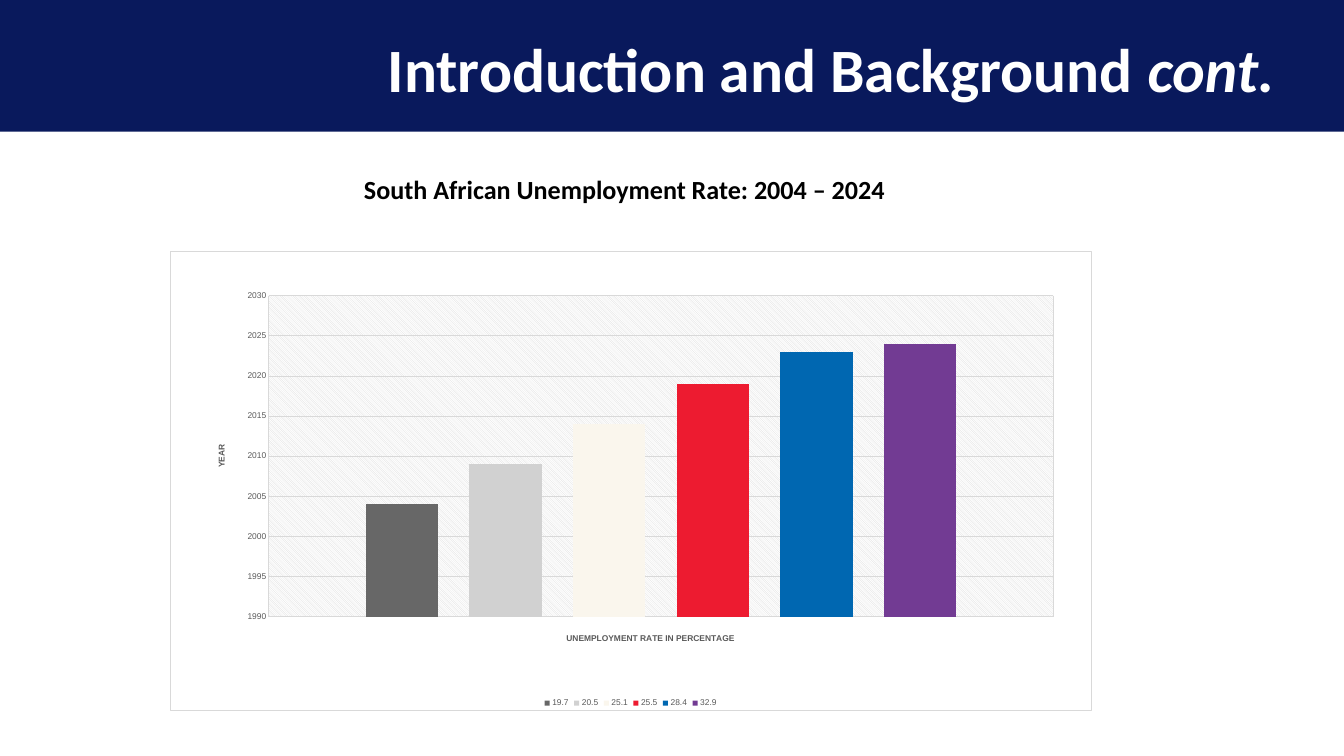
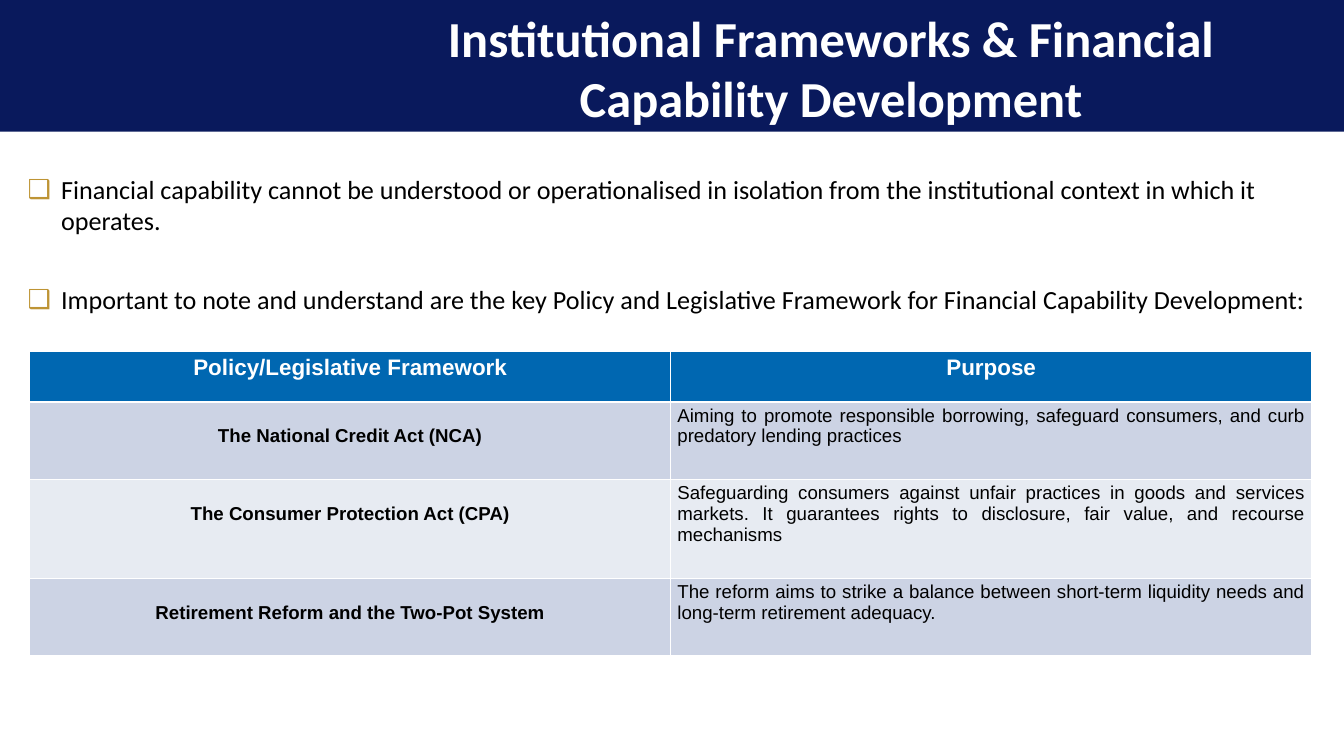
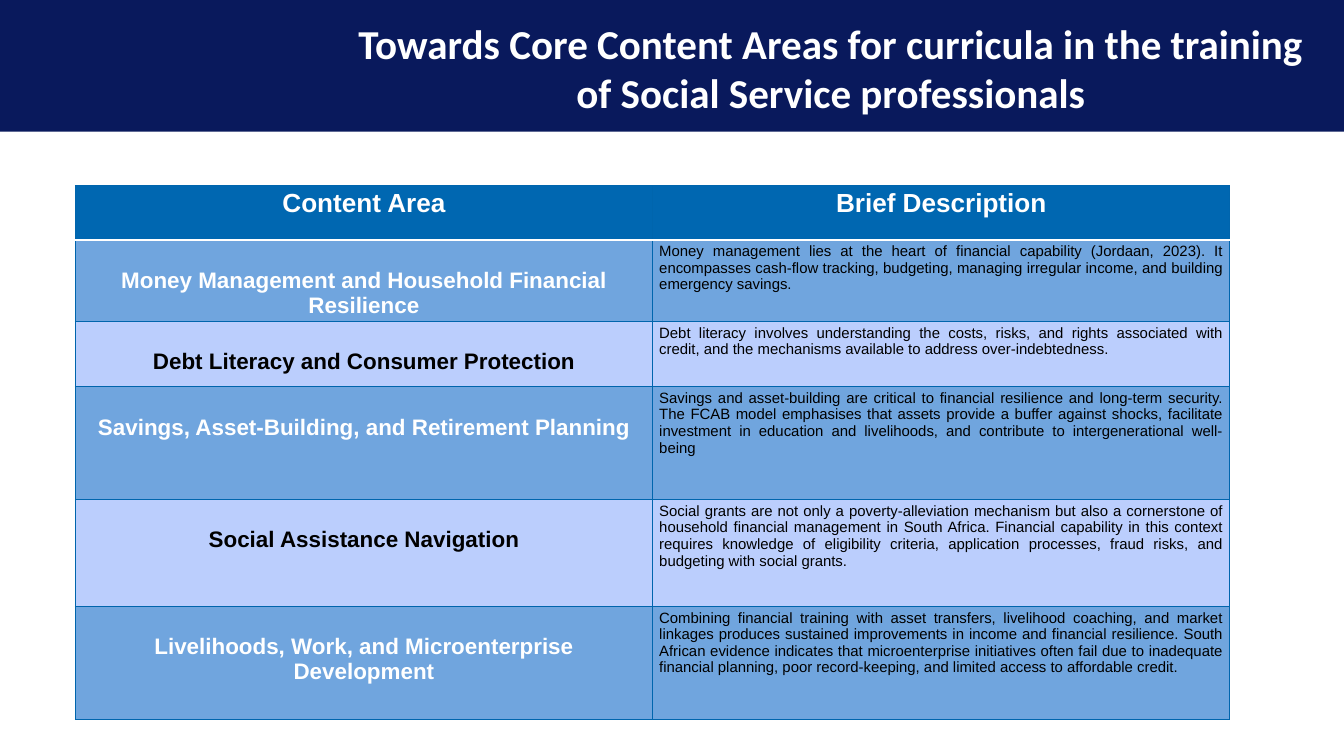
import pptx
import pptx.chart.data
import pptx.dml.color
import pptx.enum.chart
import pptx.enum.shapes
import pptx.enum.text
import pptx.oxml
import pptx.oxml.ns
import pptx.util

PX = 9144
NAVY = pptx.dml.color.RGBColor(0x09, 0x19, 0x5C)
BLUE = pptx.dml.color.RGBColor(0x00, 0x67, 0xB1)
BORDER_BLUE = pptx.dml.color.RGBColor(0x00, 0x65, 0xAD)
MID_BLUE = pptx.dml.color.RGBColor(0x70, 0xA5, 0xDE)
PALE_BLUE = pptx.dml.color.RGBColor(0xBB, 0xCE, 0xFD)
BLUE_GREY = pptx.dml.color.RGBColor(0xCC, 0xD3, 0xE4)
PALE_GREY = pptx.dml.color.RGBColor(0xE7, 0xEB, 0xF2)
GOLD = pptx.dml.color.RGBColor(0xBE, 0x94, 0x34)
WHITE = pptx.dml.color.RGBColor(0xFF, 0xFF, 0xFF)
BLACK = pptx.dml.color.RGBColor(0x00, 0x00, 0x00)
TEXT_GREY = pptx.dml.color.RGBColor(0x59, 0x59, 0x59)
LINE_GREY = pptx.dml.color.RGBColor(0xD9, 0xD9, 0xD9)
DARK_GREY = pptx.dml.color.RGBColor(0x67, 0x67, 0x67)
SILVER = pptx.dml.color.RGBColor(0xD1, 0xD1, 0xD1)
CREAM = pptx.dml.color.RGBColor(0xFA, 0xF6, 0xED)
RED = pptx.dml.color.RGBColor(0xED, 0x1B, 0x30)
PURPLE = pptx.dml.color.RGBColor(0x72, 0x3B, 0x93)

ALIGN = pptx.enum.text.PP_ALIGN
Pt = pptx.util.Pt
qn = pptx.oxml.ns.qn
parse_xml = pptx.oxml.parse_xml
NAMESPACE_A = pptx.oxml.ns.nsdecls("a")
NAMESPACE_C = pptx.oxml.ns.nsdecls("c", "a")

TITLE_FORMAT = {"name": "Calibri", "bold": True, "color": WHITE}
BODY_FORMAT = {"name": "Calibri", "size": Pt(28), "color": BLACK}
CHART_FORMAT = {"name": "Arial", "size": Pt(9), "color": TEXT_GREY}


def apply_format(font, values):
    for name, value in values.items():
        if name == "color":
            font.color.rgb = value
        else:
            setattr(font, name, value)


def add_framework_table(slide, place, row_heights, rows, style):
    left, top, width = place
    table = slide.shapes.add_table(
        len(rows), 2, left * PX, top * PX, width * PX, sum(row_heights) * PX
    ).table
    table.horz_banding = False
    for row, height in zip(table.rows, row_heights):
        row.height = height * PX
    for row_index, texts in enumerate(rows):
        is_header = row_index == 0
        fill, label_color = (BLUE, WHITE) if is_header else style["bands"][(row_index - 1) % 2]
        for column_index, text in enumerate(texts):
            is_label = column_index == 0
            cell = table.cell(row_index, column_index)
            for side in ("L", "R", "T", "B"):
                heavy = (side == "B" and is_header) or (side == "T" and row_index == 1)
                color, weight = (WHITE, style["header_line"]) if heavy else style["border"]
                cell._tc.get_or_add_tcPr().append(parse_xml(
                    f'<a:ln{side} {NAMESPACE_A} w="{Pt(weight)}"><a:solidFill>'
                    f'<a:srgbClr val="{color}"/></a:solidFill></a:ln{side}>'
                ))
            cell.fill.solid()
            cell.fill.fore_color.rgb = fill
            paragraph = cell.text_frame.paragraphs[0]
            paragraph.alignment = ALIGN.CENTER if is_header or is_label else ALIGN.JUSTIFY
            run = paragraph.add_run()
            run.text = text
            if is_header:
                size = style["header_size"]
            elif is_label:
                size = style["label_size"]
                cell.margin_top = style["label_margin"] * PX
            else:
                size = style["text_size"]
            apply_format(run.font, {
                "name": "Arial", "size": Pt(size), "bold": is_header or is_label,
                "color": label_color if is_header or is_label else BLACK,
            })


presentation = pptx.Presentation()
presentation.slide_width = 2000 * PX
presentation.slide_height = 1125 * PX

titles = [
    (1, 66, [("Introduction and Background ", False), ("cont.", True)]),
    (1, 54, [("Institutional Frameworks & Financial Capability Development", False)]),
    (5, 44, [("Towards Core Content Areas for curricula in the training of Social Service professionals", False)]),
]
slides = []
for layout_index, size, pieces in titles:
    slide = presentation.slides.add_slide(presentation.slide_layouts[layout_index])
    slides.append(slide)
    title = slide.shapes.title
    title.left, title.top, title.width, title.height = 508 * PX, 38 * PX, 1458 * PX, 125 * PX
    title.text_frame.auto_size = pptx.enum.text.MSO_AUTO_SIZE.NONE
    title.text_frame.vertical_anchor = pptx.enum.text.MSO_ANCHOR.MIDDLE
    paragraph = title.text_frame.paragraphs[0]
    paragraph.alignment = ALIGN.CENTER
    for text, italic in pieces:
        run = paragraph.add_run()
        run.text = text
        apply_format(run.font, {**TITLE_FORMAT, "size": Pt(size), "italic": italic})
chart_slide, framework_slide, content_slide = slides

band = chart_slide.shapes.add_shape(
    pptx.enum.shapes.MSO_SHAPE.RECTANGLE, 0, 0, 2000 * PX, 196 * PX
)
band.shadow.inherit = False
band.fill.solid()
band.fill.fore_color.rgb = NAVY
band.line.fill.background()
band.element.nvSpPr.cNvPr.id = 20
presentation.slide_master.shapes.element.insert(2, band.element)

bodies = [
    (chart_slide, 100, 1658, False, ["South African Unemployment Rate: 2004 – 2024"]),
    (framework_slide, 31, 1939, True, [
        "Financial capability cannot be understood or operationalised in isolation from the institutional context in which it operates.",
        "Important to note and understand are the key Policy and Legislative Framework for Financial Capability Development:",
    ]),
]
for slide, left, width, bulleted, texts in bodies:
    body = slide.placeholders[1]
    body.left, body.top, body.width, body.height = left * PX, 253 * PX, width * PX, 833 * PX
    frame = body.text_frame
    frame.auto_size = pptx.enum.text.MSO_AUTO_SIZE.NONE
    for index, text in enumerate(texts):
        paragraph = frame.add_paragraph() if index else frame.paragraphs[0]
        paragraph.space_before = Pt(51 if index else 0)
        properties = paragraph._p.get_or_add_pPr()
        indent = 50 * PX if bulleted else 0
        properties.set("marL", str(indent))
        properties.set("indent", str(-indent))
        if bulleted:
            properties.append(parse_xml(
                f'<a:buClr {NAMESPACE_A}><a:srgbClr val="{GOLD}"/></a:buClr>'
            ))
            properties.append(parse_xml(f'<a:buChar {NAMESPACE_A} char="❑"/>'))
        else:
            properties.append(parse_xml(f'<a:buNone {NAMESPACE_A}/>'))
            paragraph.alignment = ALIGN.CENTER
        run = paragraph.add_run()
        run.text = text
        apply_format(run.font, {**BODY_FORMAT, "bold": not bulleted})

unemployment = [
    ("19.7", 2004, DARK_GREY),
    ("20.5", 2009, SILVER),
    ("25.1", 2014, CREAM),
    ("25.5", 2019, RED),
    ("28.4", 2023, BLUE),
    ("32.9", 2024, PURPLE),
]
chart_data = pptx.chart.data.CategoryChartData()
chart_data.categories = ["1"]
for rate, year, color in unemployment:
    chart_data.add_series(rate, [year])
chart = chart_slide.shapes.add_chart(
    pptx.enum.chart.XL_CHART_TYPE.COLUMN_CLUSTERED,
    253 * PX, 373 * PX, 1371 * PX, 685 * PX, chart_data,
).chart
chart.has_title = False
apply_format(chart.font, {"name": "Arial", "size": Pt(10), "color": BLACK})
chart.has_legend = True
chart.legend.position = pptx.enum.chart.XL_LEGEND_POSITION.BOTTOM
chart.legend.include_in_layout = False
apply_format(chart.legend.font, CHART_FORMAT)

plot = chart.plots[0]
apply_format(plot, {"gap_width": 267, "overlap": -43, "vary_by_categories": False})
for series, (rate, year, color) in zip(plot.series, unemployment):
    series.format.fill.solid()
    series.format.fill.fore_color.rgb = color

for axis, text in (
    (chart.category_axis, "UNEMPLOYMENT RATE IN PERCENTAGE"),
    (chart.value_axis, "YEAR"),
):
    axis.has_major_gridlines = True
    axis.major_gridlines.format.line.color.rgb = LINE_GREY
    axis.major_gridlines.format.line.width = Pt(0.75)
    run = axis.axis_title.text_frame.paragraphs[0].add_run()
    run.text = text
    apply_format(run.font, {**CHART_FORMAT, "bold": True})
chart.category_axis.visible = False
apply_format(chart.value_axis, {
    "minimum_scale": 1990, "maximum_scale": 2030, "major_unit": 5,
    "major_tick_mark": pptx.enum.chart.XL_TICK_MARK.NONE,
})
chart.value_axis.format.line.fill.background()
apply_format(chart.value_axis.tick_labels.font, CHART_FORMAT)

chart_element = chart.element.find(qn("c:chart"))
chart_element.addnext(parse_xml(
    f'<c:spPr {NAMESPACE_C}><a:solidFill><a:srgbClr val="{WHITE}"/></a:solidFill>'
    f'<a:ln w="{Pt(0.75)}"><a:solidFill><a:srgbClr val="{LINE_GREY}"/></a:solidFill></a:ln></c:spPr>'
))
plot_area = chart_element.find(qn("c:plotArea"))
for layout in plot_area.findall(qn("c:layout")):
    plot_area.remove(layout)
plot_area.insert(0, parse_xml(
    f'<c:layout {NAMESPACE_C}><c:manualLayout><c:layoutTarget val="inner"/>'
    '<c:xMode val="edge"/><c:yMode val="edge"/><c:x val="0.107"/><c:y val="0.097"/>'
    '<c:w val="0.852"/><c:h val="0.699"/></c:manualLayout></c:layout>'
))
plot_area.append(parse_xml(
    f'<c:spPr {NAMESPACE_C}><a:pattFill prst="ltDnDiag">'
    f'<a:fgClr><a:srgbClr val="{LINE_GREY}"/></a:fgClr>'
    f'<a:bgClr><a:srgbClr val="{WHITE}"/></a:bgClr></a:pattFill></c:spPr>'
))

add_framework_table(
    framework_slide, (44, 523, 1908), [75, 115, 148, 115],
    [
        ("Policy/Legislative Framework", "Purpose"),
        ("The National Credit Act (NCA)",
         "Aiming to promote responsible borrowing, safeguard consumers, and curb predatory lending practices"),
        ("The Consumer Protection Act (CPA)",
         "Safeguarding consumers against unfair practices in goods and services markets. It guarantees rights to disclosure, fair value, and recourse mechanisms"),
        ("Retirement Reform and the Two-Pot System",
         "The reform aims to strike a balance between short-term liquidity needs and long-term retirement adequacy."),
    ],
    {
        "header_size": 24, "label_size": 20, "text_size": 20, "label_margin": 36,
        "border": (WHITE, 1), "header_line": 3,
        "bands": [(BLUE_GREY, BLACK), (PALE_GREY, BLACK)],
    },
)

add_framework_table(
    content_slide, (112, 276, 1718), [81, 120, 97, 168, 159, 168],
    [
        ("Content Area", "Brief Description"),
        ("Money Management and Household Financial Resilience",
         "Money management lies at the heart of financial capability (Jordaan, 2023). It encompasses cash-flow tracking, budgeting, managing irregular income, and building emergency savings."),
        ("Debt Literacy and Consumer Protection",
         "Debt literacy involves understanding the costs, risks, and rights associated with credit, and the mechanisms available to address over-indebtedness."),
        ("Savings, Asset-Building, and Retirement Planning",
         "Savings and asset-building are critical to financial resilience and long-term security. The FCAB model emphasises that assets provide a buffer against shocks, facilitate investment in education and livelihoods, and contribute to intergenerational well-being"),
        ("Social Assistance Navigation",
         "Social grants are not only a poverty-alleviation mechanism but also a cornerstone of household financial management in South Africa. Financial capability in this context requires knowledge of eligibility criteria, application processes, fraud risks, and budgeting with social grants."),
        ("Livelihoods, Work, and Microenterprise Development",
         "Combining financial training with asset transfers, livelihood coaching, and market linkages produces sustained improvements in income and financial resilience. South African evidence indicates that microenterprise initiatives often fail due to inadequate financial planning, poor record-keeping, and limited access to affordable credit."),
    ],
    {
        "header_size": 28, "label_size": 24, "text_size": 16, "label_margin": 42,
        "border": (BORDER_BLUE, 0.75), "header_line": 2,
        "bands": [(MID_BLUE, WHITE), (PALE_BLUE, BLACK)],
    },
)

presentation.save("out.pptx")
